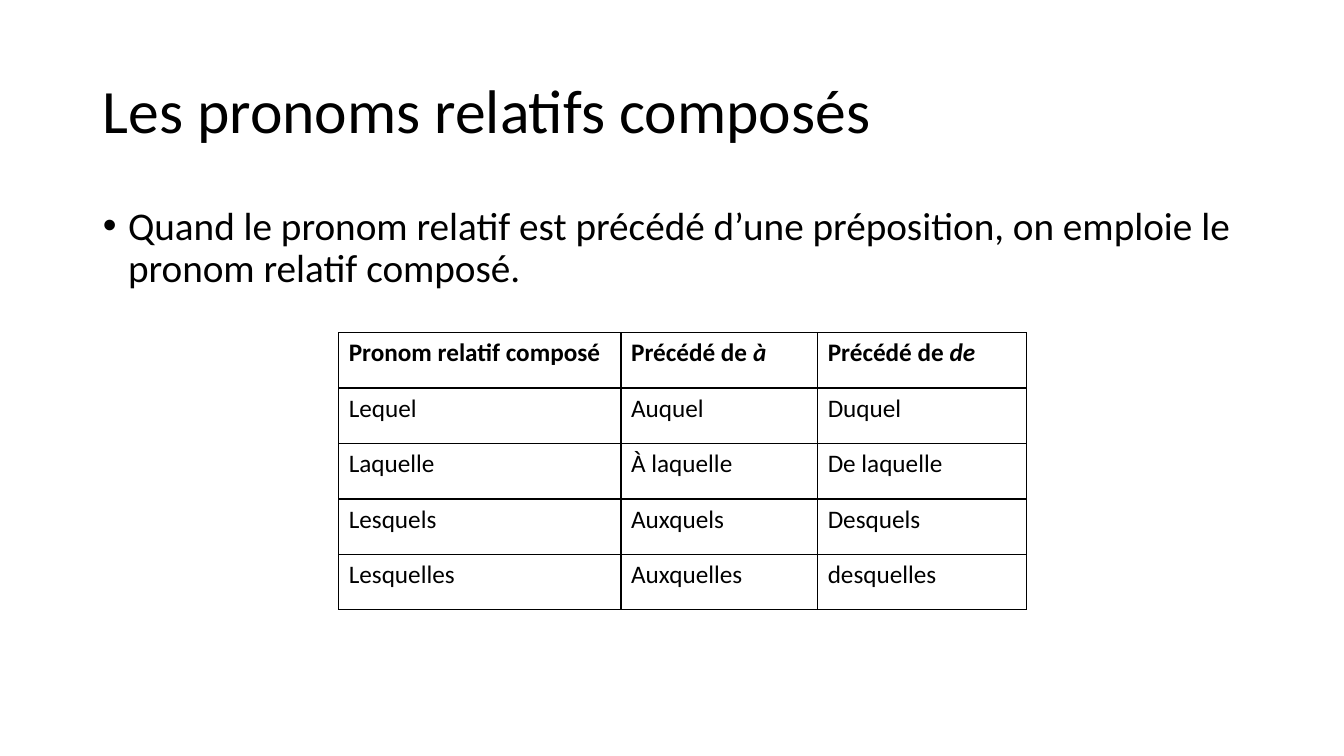
from lxml import etree
from pptx import Presentation
from pptx.dml.color import RGBColor
from pptx.enum import text
from pptx.oxml import ns
from pptx.util import Inches, Pt

BLACK = RGBColor(0, 0, 0)
WHITE = RGBColor(255, 255, 255)

HEADERS = [("Pronom relatif composé", ""), ("Précédé de ", "à"), ("Précédé de ", "de")]
PRONOUNS = [
    ("Lequel", "Auquel", "Duquel"),
    ("Laquelle", "À laquelle", "De laquelle"),
    ("Lesquels", "Auxquels", "Desquels"),
    ("Lesquelles", "Auxquelles", "desquelles"),
]
COLUMN_WIDTHS = [2.8, 1.95, 2.07]
ROW_HEIGHT = 0.55


def add_span(para, words, size, bold=False, italic=False):
    span = para.add_run()
    span.text = words
    span.font.name = "Calibri"
    span.font.size = Pt(size)
    span.font.bold = bold
    span.font.italic = italic
    span.font.color.rgb = BLACK


def add_borders(cell):
    properties = cell._tc.get_or_add_tcPr()
    for side in ("lnL", "lnR", "lnT", "lnB"):
        line = etree.SubElement(properties, ns.qn(f"a:{side}"), w=str(Pt(1)))
        fill = etree.SubElement(line, ns.qn("a:solidFill"))
        etree.SubElement(fill, ns.qn("a:srgbClr"), val=str(BLACK))


deck = Presentation()
deck.slide_width = Inches(13.33)
deck.slide_height = Inches(7.5)
page = deck.slides.add_slide(deck.slide_layouts[1])
page.background.fill.solid()
page.background.fill.fore_color.rgb = WHITE

title, body = page.placeholders
placeholders = [
    (title, 0.4, 1.45, text.MSO_ANCHOR.MIDDLE, 44, "Les pronoms relatifs composés"),
    (body, 2, 4.76, text.MSO_ANCHOR.TOP, 28,
     "Quand le pronom relatif est précédé d’une préposition, "
     "on emploie le pronom relatif composé."),
]
for box, top, height, anchor, size, words in placeholders:
    box.left, box.top = Inches(0.92), Inches(top)
    box.width, box.height = Inches(11.5), Inches(height)
    frame = box.text_frame
    frame.word_wrap = True
    frame.auto_size = text.MSO_AUTO_SIZE.NONE
    frame.vertical_anchor = anchor
    para = frame.paragraphs[0]
    para.alignment = text.PP_ALIGN.LEFT
    para.line_spacing = 0.9
    para.space_before = Pt(0)
    add_span(para, words, size)

bullet = body.text_frame.paragraphs[0]._p.get_or_add_pPr()
bullet.set("marL", str(Inches(0.25)))
bullet.set("indent", str(Inches(-0.25)))
etree.SubElement(bullet, ns.qn("a:buFont"), typeface="Arial")
etree.SubElement(bullet, ns.qn("a:buChar"), char="•")

row_count = len(PRONOUNS) + 1
table = page.shapes.add_table(
    row_count, len(COLUMN_WIDTHS), Inches(3.36), Inches(3.3),
    Inches(sum(COLUMN_WIDTHS)), Inches(ROW_HEIGHT * row_count),
).table
table.horz_banding = False
for column, width in zip(table.columns, COLUMN_WIDTHS):
    column.width = Inches(width)
for row in table.rows:
    row.height = Inches(ROW_HEIGHT)

for index, (lead, preposition) in enumerate(HEADERS):
    para = table.cell(0, index).text_frame.paragraphs[0]
    add_span(para, lead, 18, bold=True)
    if preposition:
        add_span(para, preposition, 18, bold=True, italic=True)

for row_index, forms in enumerate(PRONOUNS, start=1):
    for index, form in enumerate(forms):
        add_span(table.cell(row_index, index).text_frame.paragraphs[0], form, 18)

for cell in table.iter_cells():
    add_borders(cell)
    cell.fill.solid()
    cell.fill.fore_color.rgb = WHITE

deck.save("out.pptx")
